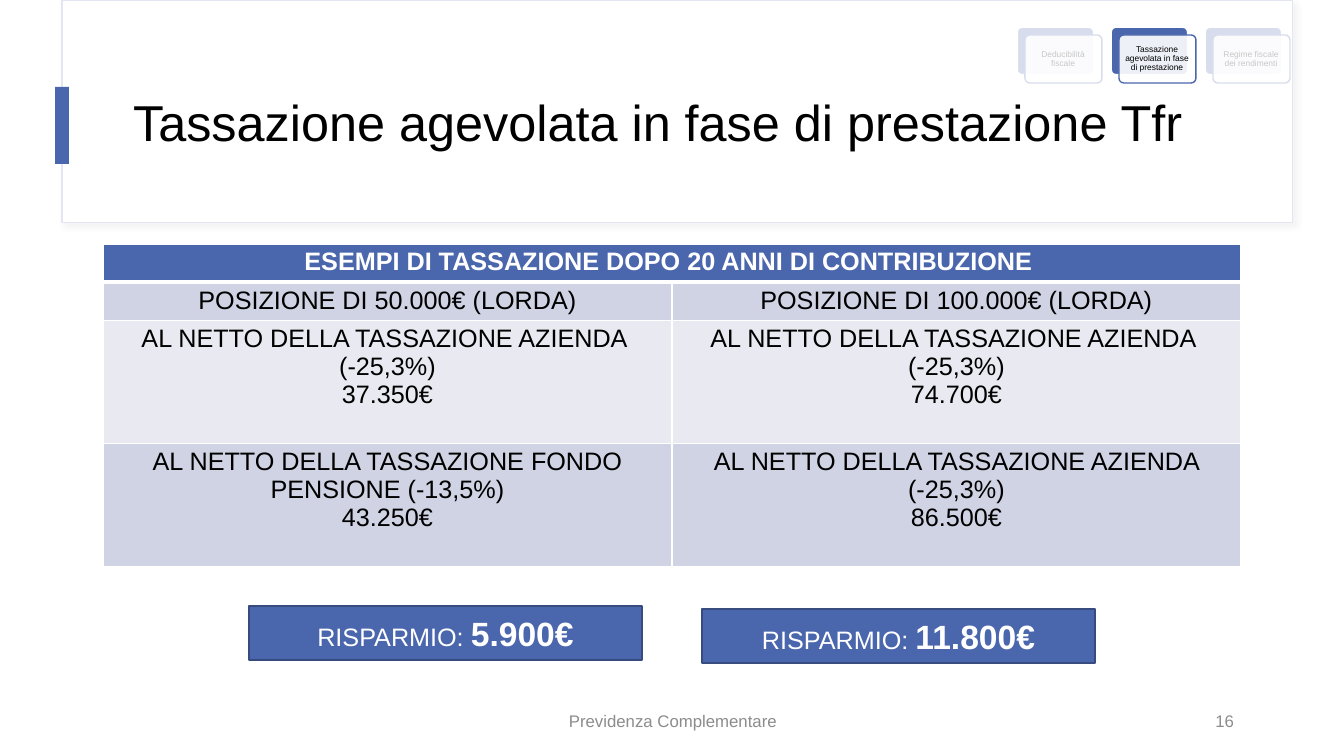
"""Build the slide on favourable taxation of the Tfr at payout."""
from lxml import etree
from pptx import Presentation
from pptx.dml.color import RGBColor
from pptx.enum.shapes import MSO_SHAPE
from pptx.enum.text import MSO_ANCHOR, PP_ALIGN
from pptx.oxml.ns import qn
from pptx.util import Emu, Pt

RECT, ROUNDED = MSO_SHAPE.RECTANGLE, MSO_SHAPE.ROUNDED_RECTANGLE
LEFT, CENTER, RIGHT = PP_ALIGN.LEFT, PP_ALIGN.CENTER, PP_ALIGN.RIGHT
MIDDLE, TOP = MSO_ANCHOR.MIDDLE, MSO_ANCHOR.TOP
EMU_PER_PX = 914400 / 100.8
FONT = "Arial"
BLUE, WHITE, BLACK, GREY = "4A66AC", "FFFFFF", "000000", "8C8C8C"
DARK_BAND, LIGHT_BAND = "D0D3E3", "E9EAF1"

TITLE = "Tassazione agevolata in fase di prestazione Tfr"
HEADING = "ESEMPI DI TASSAZIONE DOPO 20 ANNI DI CONTRIBUZIONE "
COMPANY = "AL NETTO DELLA TASSAZIONE AZIENDA"
TABLE_ROWS = [
    (37, BLUE, [HEADING, ""]),
    (38, DARK_BAND, ["POSIZIONE DI 50.000€ (LORDA)", "POSIZIONE DI 100.000€ (LORDA)"]),
    (123, LIGHT_BAND, [f"{COMPANY} \n(-25,3%)\n37.350€", f"{COMPANY} \n(-25,3%)\n74.700€"]),
    (123, DARK_BAND, ["AL NETTO DELLA TASSAZIONE FONDO PENSIONE (-13,5%)\n43.250€",
                      f"{COMPANY} (-25,3%)\n86.500€"]),
]
SAVINGS = [("11.800€", 702, 609), ("5.900€", 249, 606)]
STEPS = ["Deducibilità fiscale", "Tassazione agevolata in fase di prestazione",
         "Regime fiscale dei rendimenti"]
VEILS = [(1205, 19), (1017, 20)]
FOOTERS = [("Previdenza Complementare", 446, 454, CENTER), ("16", 941, 303, RIGHT)]


def px(length):
    return Emu(round(length * EMU_PER_PX))


def rgb(value):
    return RGBColor.from_string(value)


def add_box(slide, area, fill, line=None, width=1, kind=RECT, opacity=100):
    box = slide.shapes.add_shape(kind, *map(px, area))
    box.shadow.inherit = False
    box.fill.solid()
    box.fill.fore_color.rgb = rgb(fill)
    if opacity < 100:
        color = box.fill._xPr.find(f"{qn('a:solidFill')}/{qn('a:srgbClr')}")
        etree.SubElement(color, qn("a:alpha"), val=str(opacity * 1000))
    if line:
        box.line.color.rgb = rgb(line)
        box.line.width = Pt(width)
    else:
        box.line.fill.background()
    if kind == ROUNDED:
        box.adjustments[0] = 0.1
    return box


def format_span(span, size, color, bold=False):
    span.font.name = FONT
    span.font.size = Pt(size)
    span.font.bold = bold
    span.font.color.rgb = rgb(color)


def write(frame, text, size, color, align=CENTER, bold=False, spacing=None):
    frame.text = text
    for para in frame.paragraphs:
        para.alignment = align
        if spacing:
            para.line_spacing = spacing
        for span in para.runs:
            format_span(span, size, color, bold)


def set_margins(owner, side, vertical):
    owner.margin_left = owner.margin_right = px(side)
    owner.margin_top = owner.margin_bottom = px(vertical)


def add_text(slide, area, text, size, color, align=CENTER, spacing=None):
    box = slide.shapes.add_textbox(*map(px, area))
    frame = box.text_frame
    frame.word_wrap = True
    frame.vertical_anchor = MIDDLE
    write(frame, text, size, color, align, spacing=spacing)
    return frame


def add_shadow(box):
    effects = box._element.spPr.find(qn("a:effectLst"))
    shadow = etree.SubElement(effects, qn("a:outerShdw"), blurRad=str(Pt(4)),
                              dist=str(Pt(3)), dir="2700000", algn="tl", rotWithShape="0")
    color = etree.SubElement(shadow, qn("a:srgbClr"), val="D9D9D9")
    etree.SubElement(color, qn("a:alpha"), val="30000")


def add_borders(cell, top, bottom):
    properties = cell._tc.get_or_add_tcPr()
    for side, width in (("L", 1), ("R", 1), ("T", top), ("B", bottom)):
        line = etree.SubElement(properties, qn(f"a:ln{side}"), w=str(Pt(width)))
        fill = etree.SubElement(line, qn("a:solidFill"))
        etree.SubElement(fill, qn("a:srgbClr"), val=WHITE)


def add_header(slide):
    title = slide.shapes.title
    title.left, title.top, title.width, title.height = map(px, (123, 60, 1121, 130))
    title.text_frame.word_wrap = True
    title.text_frame.vertical_anchor = MIDDLE
    write(title.text_frame, TITLE, 36, BLACK, LEFT, spacing=0.9)
    panel = add_box(slide, (62, 0, 1231, 223), WHITE, "E4E5F3", 0.75)
    add_shadow(panel)
    accent = add_box(slide, (55, 87, 14, 77), BLUE)
    for box in (panel, accent):
        title._element.addprevious(box._element)


def add_examples(slide):
    total = sum(height for height, _, _ in TABLE_ROWS)
    table = slide.shapes.add_table(len(TABLE_ROWS), 2, *map(px, (103, 244, 1138, total))).table
    for row, (height, fill, texts) in enumerate(TABLE_ROWS):
        table.rows[row].height = px(height)
        heading = row == 0
        for column, text in enumerate(texts):
            cell = table.cell(row, column)
            add_borders(cell, 3 if row == 1 else 1, 3 if heading else 1)
            cell.fill.solid()
            cell.fill.fore_color.rgb = rgb(fill)
            cell.vertical_anchor = TOP
            set_margins(cell, 10 if heading else 13, 4)
            write(cell.text_frame, text, 18, WHITE if heading else BLACK, bold=heading)
    table.cell(0, 0).merge(table.cell(0, 1))


def add_savings(slide):
    for amount, left, top in SAVINGS:
        box = add_box(slide, (left, top, 393, 54), BLUE, "374B7F")
        frame = box.text_frame
        frame.vertical_anchor = MIDDLE
        write(frame, "RISPARMIO: ", 18, WHITE)
        span = frame.paragraphs[0].add_run()
        span.text = amount
        format_span(span, 24, WHITE, True)


def add_steps(slide):
    for index, text in enumerate(STEPS):
        left = 1017 + 94 * index
        add_box(slide, (left, 27, 77, 48), BLUE, WHITE, 1.5, ROUNDED)
        add_box(slide, (left + 8, 35, 77, 48), WHITE, BLUE, 1, ROUNDED, 90)
        frame = add_text(slide, (left + 9, 36, 74, 46), text, 6, BLACK, spacing=0.9)
        set_margins(frame, 3, 3)
    for left, top in VEILS:
        add_box(slide, (left, top, 87, 68), WHITE, opacity=78)


def main():
    deck = Presentation()
    deck.slide_width, deck.slide_height = px(1344), px(756)
    slide = deck.slides.add_slide(deck.slide_layouts[5])
    add_header(slide)
    for text, left, width, align in FOOTERS:
        add_text(slide, (left, 701, width, 40), text, 12, GREY, align)
    add_examples(slide)
    add_savings(slide)
    add_steps(slide)
    deck.save("out.pptx")


if __name__ == "__main__":
    main()
